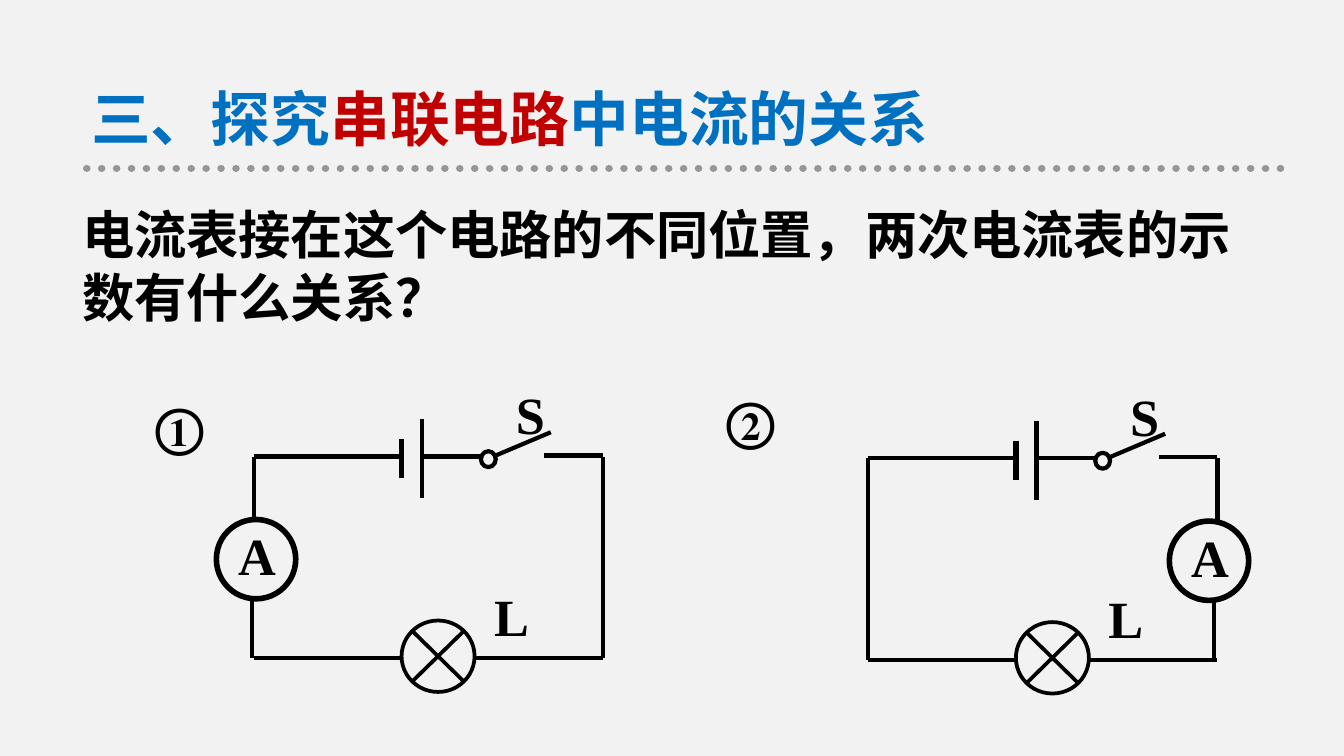
from dataclasses import dataclass

from lxml import etree
from pptx import Presentation
from pptx.dml.color import RGBColor
from pptx.enum.dml import MSO_LINE
from pptx.enum.shapes import MSO_CONNECTOR, MSO_SHAPE
from pptx.enum.text import MSO_ANCHOR, MSO_AUTO_SIZE, PP_ALIGN
from pptx.oxml.ns import qn
from pptx.util import Cm, Pt

STRAIGHT = MSO_CONNECTOR.STRAIGHT
ELLIPSE = MSO_SHAPE.OVAL
LAMP = MSO_SHAPE.FLOWCHART_SUMMING_JUNCTION
ROUND_DOT = MSO_LINE.ROUND_DOT
LEFT = PP_ALIGN.LEFT
TOP, MIDDLE = MSO_ANCHOR.TOP, MSO_ANCHOR.MIDDLE
FIXED_SIZE = MSO_AUTO_SIZE.NONE


@dataclass(frozen=True)
class Theme:
    background: str = "F2F2F2"
    ink: str = "000000"
    blue: str = "0070C0"
    red: str = "C00000"
    rule: str = "969696"
    title_size: float = 32
    text_size: float = 28
    rule_width: float = 4
    wire_width: float = 2.25
    lamp_width: float = 2
    thick_width: float = 3
    chinese_font: str = "Noto Sans CJK SC"
    body_font: str = "Arial"
    symbol_font: str = "Times New Roman"


THEME = Theme()

TITLE = [("三、探究", THEME.blue), ("串联电路", THEME.red), ("中电流的关系", THEME.blue)]
QUESTION = "电流表接在这个电路的不同位置，两次电流表的示数有什么关系？"

CIRCUIT_WIDTH, CIRCUIT_HEIGHT = 6.6, 3.81
METER_TOP, METER_SIZE = 1.19, 1.5
CIRCUITS = [
    {"number": "①", "number_at": (2.69, 7.32), "origin": (4.8, 8.63),
     "meter_center": 0.04, "upper_x": 0, "lower_x": -0.03, "plain_x": CIRCUIT_WIDTH},
    {"number": "②", "number_at": (13.49, 7.21), "origin": (16.41, 8.66),
     "meter_center": 6.44, "upper_x": CIRCUIT_WIDTH, "lower_x": 6.53, "plain_x": 0},
]
SHARED_WIRES = [
    (0, 0, 2.79, 0),
    (3.18, 0, 4.27, 0),
    (5.49, -0.02, CIRCUIT_WIDTH, -0.02),
    (0, CIRCUIT_HEIGHT, 2.79, CIRCUIT_HEIGHT),
    (4.19, CIRCUIT_HEIGHT, CIRCUIT_WIDTH, CIRCUIT_HEIGHT),
    (3.18, -0.71, 3.18, 0.79),
    (4.52, 0, 5.61, -0.46),
]
SHORT_PLATE = (2.79, -0.33, 2.79, 0.41)
SHARED_OUTLINES = [
    (LAMP, (2.79, 3.1, 1.38, 1.35), THEME.lamp_width),
    (ELLIPSE, (4.29, -0.1, 0.28, 0.3), THEME.wire_width),
]
SHARED_LABELS = [("S", (4.7, -1.52, 1.07, 1.45)), ("L", (4.29, 2.29, 1.17, 1.45))]


def format_run(run, size, color, latin, east_asian):
    font = run.font
    font.size, font.bold, font.name = Pt(size), True, latin
    font.color.rgb = RGBColor.from_string(color)
    etree.SubElement(run.font._element, qn("a:ea")).set("typeface", east_asian)


def place(shape, box):
    shape.left, shape.top, shape.width, shape.height = (Cm(value) for value in box)


def prepare_placeholder(shape, box, anchor):
    place(shape, box)
    frame = shape.text_frame
    frame.word_wrap, frame.auto_size, frame.vertical_anchor = True, FIXED_SIZE, anchor
    paragraph = frame.paragraphs[0]
    paragraph.alignment, paragraph.line_spacing = LEFT, 1.0
    paragraph.space_before = Pt(0)
    return paragraph


def add_line(shapes, ends, width, color=THEME.ink):
    line = shapes.add_connector(STRAIGHT, *(Cm(value) for value in ends))
    line.line.width = Pt(width)
    line.line.color.rgb = RGBColor.from_string(color)
    etree.SubElement(line.element.spPr, qn("a:effectLst"))
    return line


def add_outline(shapes, kind, box, width):
    shape = shapes.add_shape(kind, *(Cm(value) for value in box))
    shape.shadow.inherit = False
    shape.fill.background()
    shape.line.width = Pt(width)
    shape.line.color.rgb = RGBColor.from_string(THEME.ink)


def add_label(shapes, text, box, wrap):
    frame = shapes.add_textbox(*(Cm(value) for value in box)).text_frame
    frame.word_wrap = wrap
    frame.text = text
    format_run(frame.paragraphs[0].runs[0], THEME.text_size, THEME.ink,
               THEME.symbol_font, THEME.symbol_font)


def add_circuit(slide, circuit):
    left, top = circuit["origin"]
    shapes = slide.shapes.add_group_shape().shapes

    def shift_ends(ends):
        x1, y1, x2, y2 = ends
        return left + x1, top + y1, left + x2, top + y2

    def shift_box(box):
        x, y, width, height = box
        return left + x, top + y, width, height

    upper, lower, plain = circuit["upper_x"], circuit["lower_x"], circuit["plain_x"]
    side_wires = [
        (upper, 0, upper, METER_TOP),
        (lower, METER_TOP + METER_SIZE, lower, CIRCUIT_HEIGHT),
        (plain, 0, plain, CIRCUIT_HEIGHT),
    ]
    for wire in SHARED_WIRES + side_wires:
        add_line(shapes, shift_ends(wire), THEME.wire_width)
    add_line(shapes, shift_ends(SHORT_PLATE), THEME.thick_width)

    meter_left = circuit["meter_center"] - METER_SIZE / 2
    meter = (ELLIPSE, (meter_left, METER_TOP, METER_SIZE, METER_SIZE), THEME.thick_width)
    for kind, box, width in SHARED_OUTLINES + [meter]:
        add_outline(shapes, kind, shift_box(box), width)
    for text, box in SHARED_LABELS:
        add_label(shapes, text, shift_box(box), False)
    add_label(shapes, "A", shift_box((meter_left + 0.16, METER_TOP - 0.05, 1.27, 1.45)), True)


def main():
    presentation = Presentation()
    presentation.slide_width, presentation.slide_height = Cm(25.4), Cm(14.29)
    slide = presentation.slides.add_slide(presentation.slide_layouts[1])
    slide.background.fill.solid()
    slide.background.fill.fore_color.rgb = RGBColor.from_string(THEME.background)

    rule = add_line(slide.shapes, (24.2, 3.18, 1.57, 3.18), THEME.rule_width, THEME.rule)
    rule.line.dash_style = ROUND_DOT
    rule.element.spPr.find(qn("a:ln")).set("cap", "rnd")

    title = prepare_placeholder(slide.shapes.title, (1.47, 1.4, 18.62, 1.63), MIDDLE)
    for text, color in TITLE:
        run = title.add_run()
        run.text = text
        format_run(run, THEME.title_size, color, THEME.chinese_font, THEME.chinese_font)

    question = prepare_placeholder(slide.placeholders[1], (1.3, 3.7, 22.7, 3), TOP)
    question.text = QUESTION
    format_run(question.runs[0], THEME.text_size, THEME.ink, THEME.body_font, THEME.chinese_font)
    properties = question._p.get_or_add_pPr()
    properties.set("marL", "0")
    properties.set("indent", "0")
    etree.SubElement(properties, qn("a:buNone"))

    for circuit in CIRCUITS:
        add_label(slide.shapes, circuit["number"], (*circuit["number_at"], 1.7, 1.45), True)
        add_circuit(slide, circuit)

    presentation.save("out.pptx")


if __name__ == "__main__":
    main()
